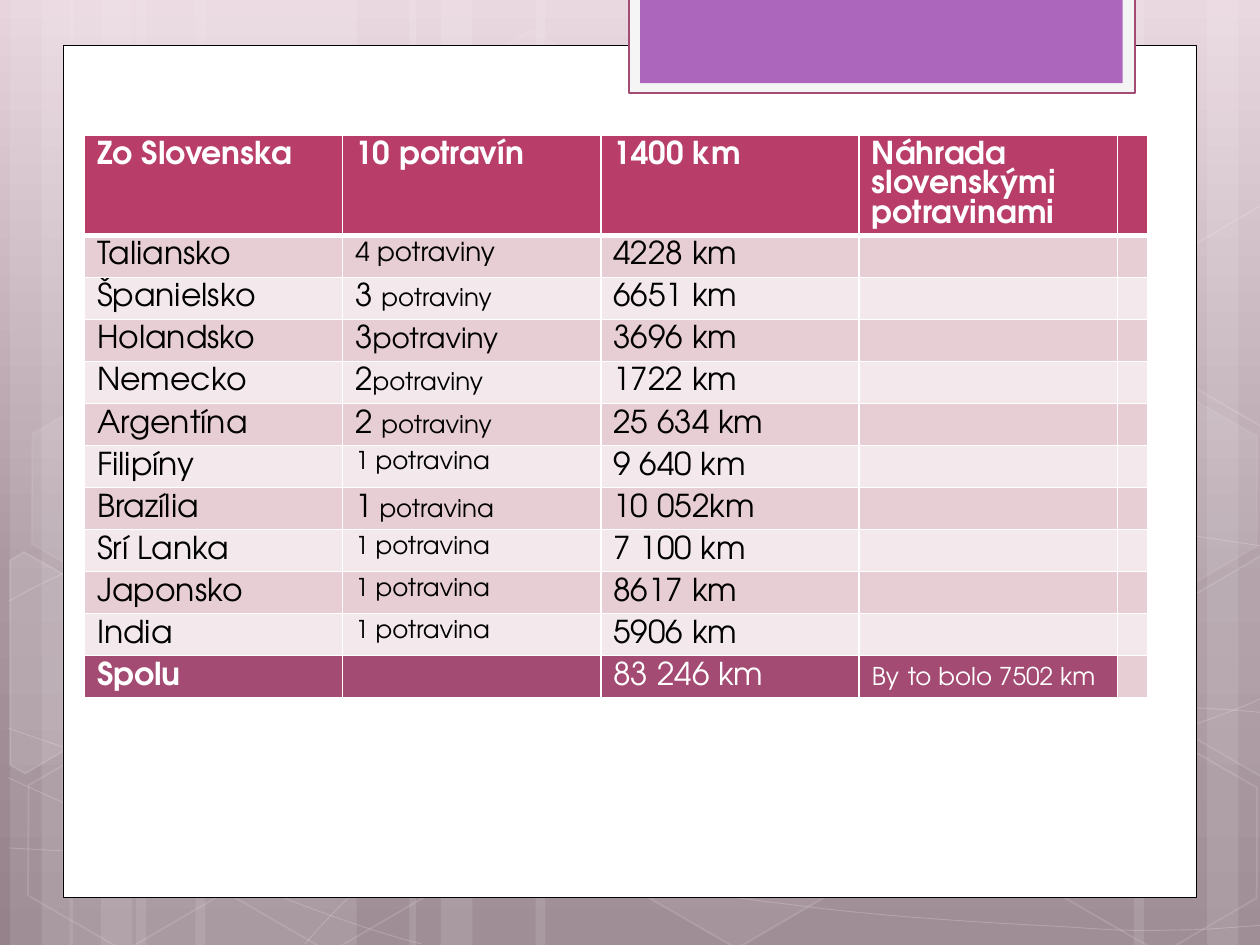
from copy import deepcopy

from lxml.etree import SubElement
from pptx import Presentation
from pptx.dml.color import RGBColor
from pptx.enum.shapes import MSO_SHAPE
from pptx.enum.text import PP_ALIGN
from pptx.oxml.ns import qn
from pptx.util import Inches, Pt

FONT = "TeX Gyre Adventor"
WHITE = RGBColor(0xFF, 0xFF, 0xFF)
BLACK = RGBColor(0x00, 0x00, 0x00)
PAPER = RGBColor(0xF5, 0xF5, 0xF5)
PURPLE = RGBColor(0xAC, 0x66, 0xBB)
PLUM = RGBColor(0xA3, 0x4B, 0x73)
CRIMSON = RGBColor(0xB8, 0x3D, 0x68)
BANDS = (RGBColor(0xE6, 0xCE, 0xD4), RGBColor(0xF3, 0xE8, 0xEB))
BACKDROP = (
    (0, RGBColor(0xE8, 0xD4, 0xDD)),
    (0.62, RGBColor(0xA9, 0x96, 0x9F)),
    (1, RGBColor(0x96, 0x82, 0x8B)),
)
LINE_RATIO = 0.93
STRIPES = (
    (1.08, 1.75), (0.08, 0.5), (0.33, 0.83), (1.55, 1.75), (0.55, 0.5), (0.8, 0.83),
    (7.33, 1.75), (9.58, 0.5), (9, 0.83), (4.25, 3.08), (3.25, 0.5), (3.5, 0.83),
)
CURVES = (
    ((0.07, 6.73), (0.61, 6.76), (1.15, 6.79), (1.9, 6.78), (2.65, 6.77), (3.58, 6.75),
     (4.58, 6.65), (5.58, 6.55), (7, 6.36), (7.92, 6.17), (8.83, 5.98), (9.77, 5.68),
     (10.07, 5.51)),
    ((0.07, 4.77), (0.36, 4.61), (0.65, 4.46), (1.21, 4.31), (1.78, 4.16), (2.59, 3.94),
     (3.47, 3.87), (4.36, 3.8), (5.44, 3.79), (6.54, 3.87), (7.64, 3.95), (9.47, 4.26),
     (10.07, 4.34)),
    ((0.06, 6.17), (1.27, 6.72), (2.47, 7.27), (3.34, 7.49)),
    ((0.07, 5.78), (0.38, 5.89), (0.7, 6), (1.28, 6.16), (1.86, 6.31), (2.73, 6.56),
     (3.57, 6.73), (4.4, 6.9), (5.45, 7.08), (6.28, 7.18), (7.11, 7.29), (8, 7.33),
     (8.53, 7.36), (9.05, 7.4), (9.19, 7.38), (9.45, 7.38), (9.71, 7.37), (9.89, 7.35),
     (10.07, 7.34)),
    ((2.42, 7.49), (2.6, 7.29), (2.78, 7.09), (3.02, 6.91), (3.26, 6.73), (3.6, 6.53),
     (3.88, 6.39), (4.16, 6.25), (4.33, 6.19), (4.7, 6.09), (5.06, 5.99), (5.73, 5.85),
     (6.08, 5.78), (6.44, 5.71), (6.49, 5.71), (6.8, 5.69), (7.11, 5.66), (7.6, 5.63),
     (7.94, 5.62), (8.29, 5.61), (8.86, 5.62), (8.86, 5.62), (9.1, 5.62), (9.3, 5.62),
     (9.53, 5.62), (9.71, 5.63), (9.88, 5.64), (10.06, 5.66)),
)
HEXAGONS = (
    (3.34, 0.36, 4, 8), (4.97, 5.89, 6, 12), (0.11, 5.91, 0, 12), (0.14, 3.12, 7, 8),
    (1.74, 5.92, 0, 12), (7.53, 4.53, 10, 12), (8.34, 5.93, 0, 12), (8.34, 3.14, 7, 8),
)
CUT_HEXAGONS = (
    (((0.08, 4.45), (0.19, 4.38), (0.96, 4.82), (0.95, 5.7), (0.2, 6.14), (0.08, 6.07)), 10),
    (((9.26, 4.85), (10.01, 4.41), (10.09, 4.46), (10.09, 6.13), (10.02, 6.17), (9.26, 5.73)), 4),
    (((9.26, 2.07), (10.01, 1.63), (10.1, 1.68), (10.09, 3.35), (10.02, 3.39), (9.26, 2.95)), 0),
)
HEADINGS = ("Zo Slovenska", "10 potravín", "1400 km", "Náhrada\nslovenskými potravinami", "")
COUNTRIES = (
    ("Taliansko", [("4 potraviny", 15)], "4228 km"),
    ("Španielsko", [("3 ", 18), ("potraviny", 14)], "6651 km"),
    ("Holandsko", [("3", 18), ("potraviny", 16)], "3696 km"),
    ("Nemecko", [("2", 18), ("potraviny", 14)], "1722 km"),
    ("Argentína", [("2 ", 18), ("potraviny", 14)], "25 634 km"),
    ("Filipíny", [("1 potravina", 14)], "9 640 km"),
    ("Brazília", [("1", 18), (" potravina", 14)], "10 052km"),
    ("Srí Lanka", [("1 potravina", 14)], "7 100 km"),
    ("Japonsko", [("1 potravina", 14)], "8617 km"),
    ("India", [("1 potravina", 14)], "5906 km"),
)
TOTAL_NOTE = [("By", 14), (" ", 18), ("to bolo 7502 km", 14)]


def set_alpha(color_format, percent):
    """Make a solid colour partly transparent."""
    color = color_format._xFill.find(qn("a:srgbClr"))
    SubElement(color, qn("a:alpha"), val=str(percent * 1000))


def style_shape(shape, fill=None, fill_alpha=100, line=None, width=1, line_alpha=100):
    """Set fill, outline and transparency of a shape."""
    shape.shadow.inherit = False
    for target, color, alpha in ((shape.fill, fill, fill_alpha), (shape.line.fill, line, line_alpha)):
        if color is None or alpha == 0:
            target.background()
            continue
        target.solid()
        target.fore_color.rgb = color
        if alpha < 100:
            set_alpha(target.fore_color, alpha)
    if line is not None:
        shape.line.width = Pt(width)


def add_box(slide, kind, box, **style):
    """Add a styled preset shape in a box given in inches."""
    shape = slide.shapes.add_shape(kind, *map(Inches, box))
    style_shape(shape, **style)
    return shape


def add_outline(slide, points, close, **style):
    """Add a styled freeform through points given in inches."""
    corners = [(Inches(x), Inches(y)) for x, y in points]
    builder = slide.shapes.build_freeform(*corners[0])
    builder.add_line_segments(corners[1:], close=close)
    shape = builder.convert_to_shape()
    style_shape(shape, **style)
    return shape


def bend_outline(shape):
    """Turn every three line segments into one cubic curve."""
    segments = list(shape._element.iter(qn("a:lnTo")))
    for start in range(0, len(segments), 3):
        first, *others = segments[start:start + 3]
        curve = first.makeelement(qn("a:cubicBezTo"), {})
        first.addprevious(curve)
        for segment in (first, *others):
            curve.append(segment[0])
            segment.getparent().remove(segment)


def paint_background(slide):
    """Fill the background with a vertical gradient."""
    fill = slide.background.fill
    fill.gradient()
    fill.gradient_angle = 270
    stop_list = fill._fill._gradFill.gsLst
    stop_list.insert(1, deepcopy(stop_list[0]))
    for stop, (position, color) in zip(fill.gradient_stops, BACKDROP):
        stop.position = position
        stop.color.rgb = color


def draw_decoration(slide, height):
    """Draw the pale stripes, curves and hexagons."""
    for left, width in STRIPES:
        add_box(slide, MSO_SHAPE.RECTANGLE, (left, 0, width, height), fill=WHITE, fill_alpha=10)
    for knots in CURVES:
        bend_outline(add_outline(slide, knots, False, line=WHITE, width=0.5, line_alpha=20))
    for left, top, fill_alpha, line_alpha in HEXAGONS:
        hexagon = add_box(slide, MSO_SHAPE.HEXAGON, (left, top, 1.75, 1.52), fill=WHITE,
                          fill_alpha=fill_alpha, line=WHITE, line_alpha=line_alpha)
        hexagon.adjustments[0] = 0.285
        hexagon.rotation = 30
    for points, fill_alpha in CUT_HEXAGONS:
        add_outline(slide, points, True, fill=WHITE, fill_alpha=fill_alpha, line=WHITE, line_alpha=12)


def draw_panel(slide, left, top, width, height):
    """Draw the white page with its purple tab."""
    add_box(slide, MSO_SHAPE.RECTANGLE, (left, top, width, height), fill=WHITE, line=BLACK, width=0.5)
    add_box(slide, MSO_SHAPE.RECTANGLE, (left + 4.49, -0.02, 4.02, 0.76), fill=PAPER, line=PLUM, width=1.25)
    add_box(slide, MSO_SHAPE.RECTANGLE, (left + 4.58, -0.02, 3.83, 0.68), fill=PURPLE)


def set_borders(cell, bottom):
    """Draw white cell borders with the given bottom width in points."""
    properties = cell._tc.get_or_add_tcPr()
    for index, (side, width) in enumerate((("L", 1), ("R", 1), ("T", 1), ("B", bottom))):
        border = properties.makeelement(qn(f"a:ln{side}"), {"w": str(Pt(width))})
        SubElement(SubElement(border, qn("a:solidFill")), qn("a:srgbClr"), val=str(WHITE))
        properties.insert(index, border)


def fill_cell(cell, content, fill, color, bold=False, bottom=1):
    """Write runs into a cell and set its colours and borders."""
    cell.fill.solid()
    cell.fill.fore_color.rgb = fill
    set_borders(cell, bottom)
    if not content:
        SubElement(cell.text_frame.paragraphs[0]._p, qn("a:endParaRPr"), sz="1000")
        return
    lines = [[(line, 18)] for line in content.split("\n")] if isinstance(content, str) else [content]
    for index, runs in enumerate(lines):
        paragraph = cell.text_frame.add_paragraph() if index else cell.text_frame.paragraphs[0]
        paragraph.line_spacing = Pt(LINE_RATIO * max(size for _, size in runs))
        for text, size in runs:
            run = paragraph.add_run()
            run.text = text
            run.font.name = FONT
            run.font.size = Pt(size)
            run.font.bold = bold
            run.font.color.rgb = color


def draw_table(slide, left, top, width, height):
    """Draw the table of countries, foods and distances."""
    row_count = len(COUNTRIES) + 2
    frame = slide.shapes.add_table(row_count, len(HEADINGS), *map(Inches, (left, top, width, height)))
    table = frame.table
    header_height = 0.79
    for index, row in enumerate(table.rows):
        row.height = Inches((height - header_height) / (row_count - 1) if index else header_height)
    for column in table.columns:
        column.width = Inches(2.05)
    table.columns[4].width = Inches(width - 4 * 2.05)
    for column, heading in enumerate(HEADINGS):
        fill_cell(table.cell(0, column), heading, CRIMSON, WHITE, bold=True, bottom=3)
    for row, country in enumerate(COUNTRIES, start=1):
        for column, content in enumerate((*country, "", "")):
            fill_cell(table.cell(row, column), content, BANDS[(row - 1) % 2], BLACK)
        if country[0] == "Japonsko":
            table.cell(row, 0).text_frame.paragraphs[0].alignment = PP_ALIGN.JUSTIFY
    for column, content in enumerate(("Spolu", "", "83 246 km", TOTAL_NOTE, "")):
        fill = BANDS[0] if column == 4 else PLUM
        fill_cell(table.cell(row_count - 1, column), content, fill, WHITE, bold=column == 0)


def main():
    """Build the slide and save it."""
    presentation = Presentation()
    presentation.slide_width, presentation.slide_height = Inches(10), Inches(7.5)
    slide = presentation.slides.add_slide(presentation.slide_layouts[6])
    paint_background(slide)
    draw_decoration(slide, 7.5)
    draw_panel(slide, 0.5, 0.36, 9, 6.76)
    draw_table(slide, 0.67, 1.07, 8.43, 4.46)
    presentation.save("out.pptx")


if __name__ == "__main__":
    main()
